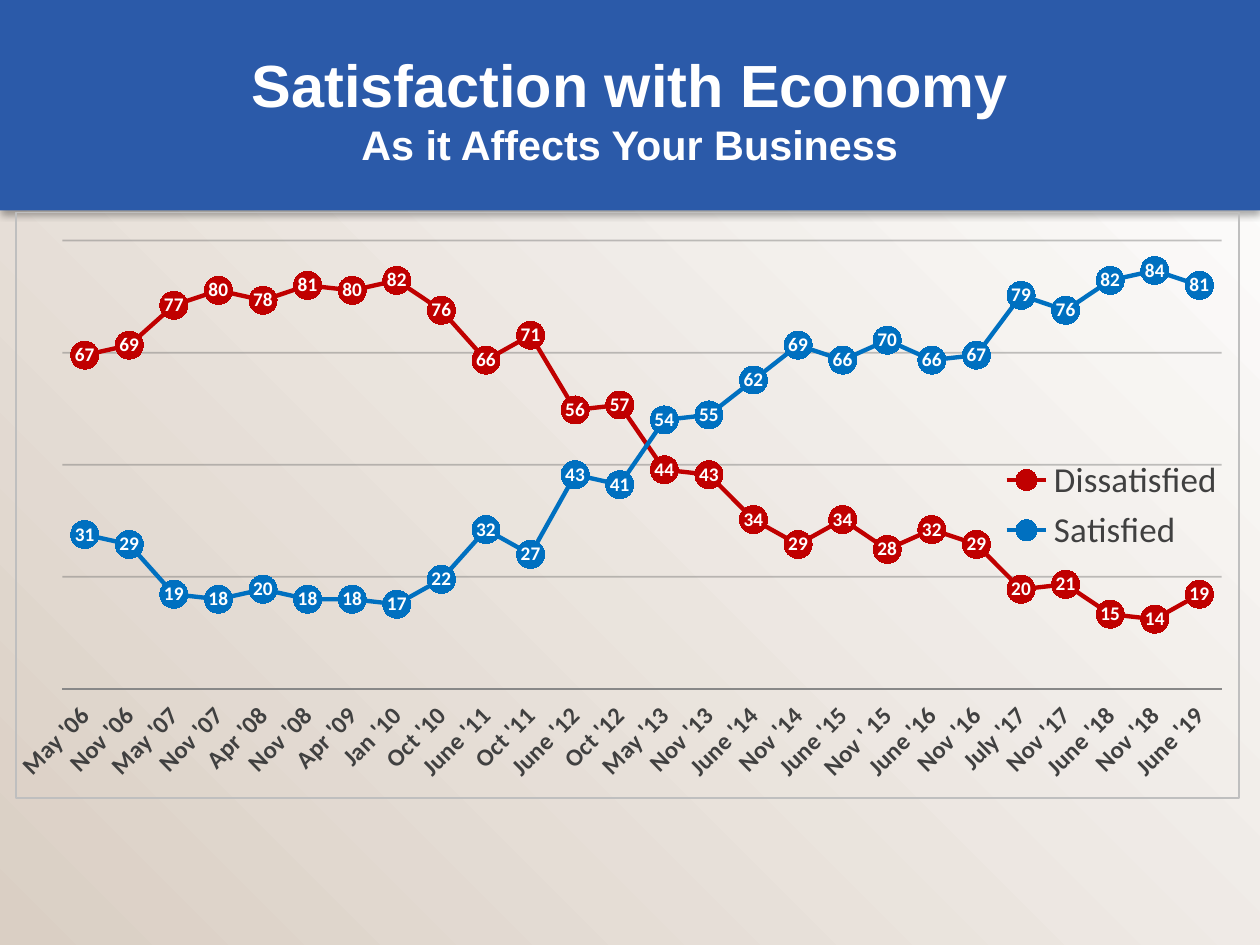
import pptx
import pptx.util
import pptx.dml.color
import pptx.chart.data
import pptx.enum.chart
import pptx.enum.shapes
import pptx.enum.text
import pptx.oxml
import pptx.oxml.ns

Inches = pptx.util.Inches
Pt = pptx.util.Pt
enums = pptx.enum.chart
qn = pptx.oxml.ns.qn
spaces = pptx.oxml.ns.nsdecls("a", "c")
color = pptx.dml.color.RGBColor.from_string

theme = {
    "sand": "DACFC4", "white": "FFFFFF", "blue": "2B5AA9", "ink": "404040",
    "black": "000000", "axis": "888888", "grid": "666666", "edge": "BFBFBF",
    "Dissatisfied": "C00000", "Satisfied": "0070C0",
    "title": 34, "sub": 23.6, "legend": 20, "months": 14, "label": 11, "base": 10,
    "head": "Arial", "body": "Calibri",
}


def style(font, face, size, hue, bold=False):
    font.name = theme[face]
    font.size = Pt(theme[size])
    font.bold = bold
    font.color.rgb = color(theme[hue])


def place(x, y, w, h, inner=""):
    return pptx.oxml.parse_xml(
        f'<c:layout {spaces}><c:manualLayout>{inner}'
        '<c:xMode val="edge"/><c:yMode val="edge"/>'
        f'<c:x val="{x}"/><c:y val="{y}"/><c:w val="{w}"/><c:h val="{h}"/>'
        '</c:manualLayout></c:layout>')


deck = pptx.Presentation()
deck.slide_width = Inches(10)
deck.slide_height = Inches(7.5)
slide = deck.slides.add_slide(deck.slide_layouts[6])
rect = pptx.enum.shapes.MSO_SHAPE.RECTANGLE

back = slide.shapes.add_shape(rect, 0, 0, Inches(10), Inches(7.5))
back.shadow.inherit = False
back.line.fill.background()
back.fill.gradient()
back.fill.gradient_angle = 45
for stop, hue, spot in zip(back.fill.gradient_stops, ("sand", "white"), (0, 1)):
    stop.color.rgb = color(theme[hue])
    stop.position = spot

band = slide.shapes.add_shape(rect, 0, 0, Inches(10), Inches(1.67))
band.shadow.inherit = False
band.line.fill.background()
band.fill.solid()
band.fill.fore_color.rgb = color(theme["blue"])
band.element.spPr.find(qn("a:effectLst")).append(pptx.oxml.parse_xml(
    f'<a:outerShdw {spaces} blurRad="{Pt(4)}" dist="{Pt(2.2)}" dir="5400000" rotWithShape="0">'
    f'<a:srgbClr val="{theme["black"]}"><a:alpha val="32000"/></a:srgbClr></a:outerShdw>'))

title = slide.shapes.add_textbox(Inches(0.5), Inches(0.3), Inches(9), Inches(1.12))
frame = title.text_frame
frame.word_wrap = True
frame.vertical_anchor = pptx.enum.text.MSO_ANCHOR.MIDDLE
frame.margin_left = frame.margin_right = Inches(0.05)
frame.margin_top = frame.margin_bottom = Inches(0.05)
frame.text = "Satisfaction with Economy\vAs it Affects Your Business"
line = frame.paragraphs[0]
line.alignment = pptx.enum.text.PP_ALIGN.CENTER
for run, size in zip(line.runs, ("title", "sub")):
    style(run.font, "head", size, "white", True)

data = pptx.chart.data.CategoryChartData()
data.categories = [
    "May '06", "Nov '06", "May '07", "Nov '07", "Apr '08", "Nov '08", "Apr '09",
    "Jan '10", "Oct '10", "June '11", "Oct '11", "June '12", "Oct '12", "May '13",
    "Nov '13", "June '14", "Nov '14", "June '15", "Nov ' 15", "June '16", "Nov '16",
    "July '17", "Nov '17", "June '18", "Nov '18", "June '19"]
data.add_series("Dissatisfied", [
    67, 69, 77, 80, 78, 81, 80, 82, 76, 66, 71, 56, 57,
    44, 43, 34, 29, 34, 28, 32, 29, 20, 21, 15, 14, 19])
data.add_series("Satisfied", [
    31, 29, 19, 18, 20, 18, 18, 17, 22, 32, 27, 43, 41,
    54, 55, 62, 69, 66, 70, 66, 67, 79, 76, 82, 84, 81])
chart = slide.shapes.add_chart(
    enums.XL_CHART_TYPE.LINE_MARKERS,
    Inches(0.12), Inches(1.68), Inches(9.72), Inches(4.66), data).chart
chart.has_title = False
style(chart.font, "body", "base", "black")

root = chart.element.find(qn("c:chart"))
root.addnext(pptx.oxml.parse_xml(
    f'<c:spPr {spaces}><a:noFill/><a:ln w="{Pt(1)}"><a:solidFill>'
    f'<a:srgbClr val="{theme["edge"]}"/></a:solidFill></a:ln></c:spPr>'))
area = root.find(qn("c:plotArea"))
for old in area.findall(qn("c:layout")):
    area.remove(old)
area.insert(0, place(0.038, 0.048, 0.948, 0.766, '<c:layoutTarget val="inner"/>'))

months = chart.category_axis
months.major_tick_mark = enums.XL_TICK_MARK.NONE
months.tick_label_position = enums.XL_TICK_LABEL_POSITION.LOW
months.format.line.width = Pt(1)
months.format.line.color.rgb = color(theme["axis"])
style(months.tick_labels.font, "body", "months", "ink", True)
months._element.find(qn("c:txPr")).find(qn("a:bodyPr")).set("rot", "-2700000")

scale = chart.value_axis
scale.minimum_scale = 0
scale.maximum_scale = 90
scale.major_unit = 22.5
scale.major_tick_mark = enums.XL_TICK_MARK.NONE
scale.tick_label_position = enums.XL_TICK_LABEL_POSITION.NONE
scale.format.line.fill.background()
grid = scale.major_gridlines.format.line
grid.width = Pt(1)
grid.color.rgb = color(theme["grid"])
for tint in scale._element.find(qn("c:majorGridlines")).iter(qn("a:srgbClr")):
    tint.append(pptx.oxml.parse_xml(f'<a:alpha {spaces} val="39000"/>'))

chart.has_legend = True
legend = chart.legend
legend.position = enums.XL_LEGEND_POSITION.RIGHT
legend.include_in_layout = True
style(legend.font, "body", "legend", "ink")
legend._element.find(qn("c:legendPos")).addnext(place(0.06, 0.34, 0.36, 0.08))

for row in chart.plots[0].series:
    hue = color(theme[row.name])
    row.smooth = False
    row.format.line.width = Pt(2.5)
    row.format.line.color.rgb = hue
    row.marker.style = enums.XL_MARKER_STYLE.CIRCLE
    row.marker.size = 16
    row.marker.format.fill.solid()
    row.marker.format.fill.fore_color.rgb = hue
    row.marker.format.line.color.rgb = hue
    labels = row.data_labels
    labels.show_value = True
    labels.position = enums.XL_LABEL_POSITION.CENTER
    labels.number_format = "0"
    labels.number_format_is_linked = False
    style(labels.font, "body", "label", "white", True)

deck.save("out.pptx")
